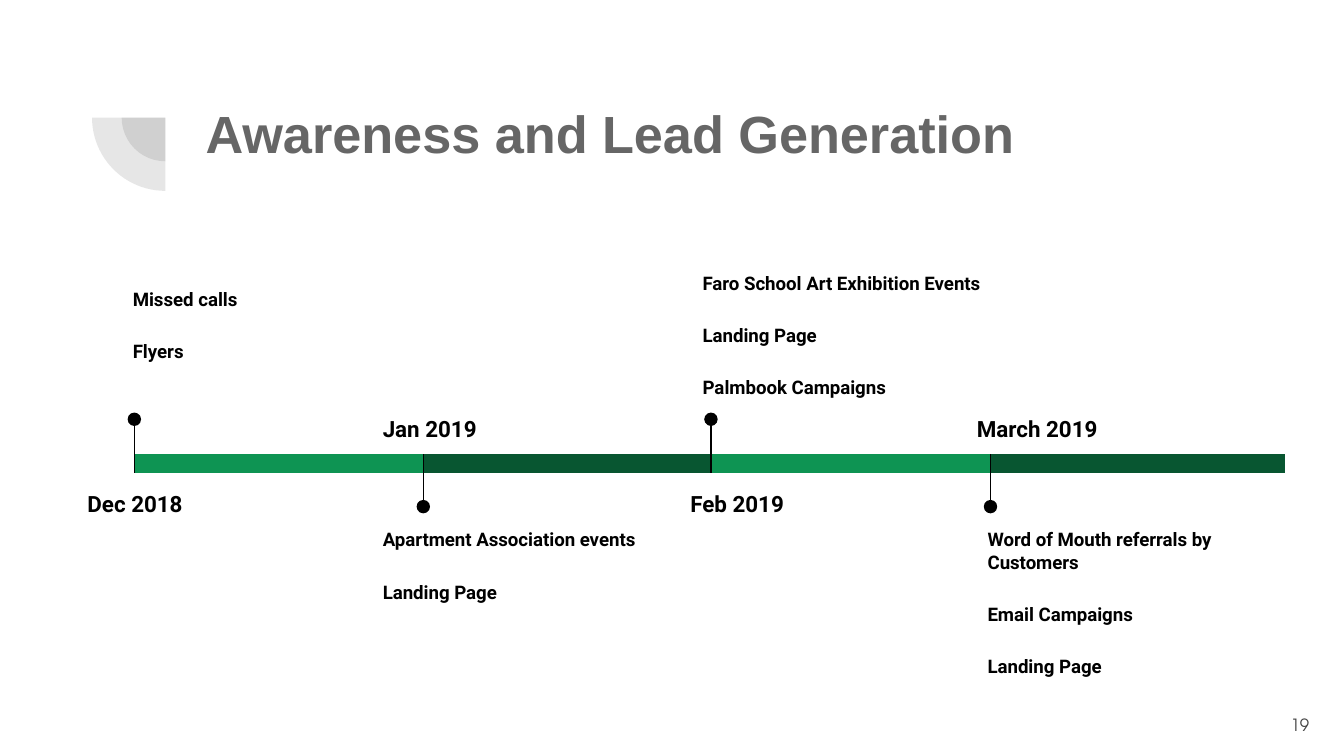
import pptx
import pptx.util
import pptx.dml.color
import pptx.enum.shapes
import pptx.enum.text
import pptx.oxml
import pptx.oxml.ns
from pptx.util import Inches, Pt

RGBColor = pptx.dml.color.RGBColor
MSO_SHAPE = pptx.enum.shapes.MSO_SHAPE
PP_ALIGN = pptx.enum.text.PP_ALIGN
MSO_ANCHOR = pptx.enum.text.MSO_ANCHOR

BLACK = RGBColor(0x00, 0x00, 0x00)
TITLE_GRAY = RGBColor(0x66, 0x66, 0x66)
DARK_GRAY = RGBColor(0x42, 0x42, 0x42)
LIGHT_GREEN = RGBColor(0x0E, 0x94, 0x53)
DARK_GREEN = RGBColor(0x08, 0x56, 0x31)

SLIDE_WIDTH = 10
SLIDE_HEIGHT = SLIDE_WIDTH * 9 / 16

TITLE = "Awareness and Lead Generation"
PAGE_NUMBER = "19"
# Start of bar, date, date box (left, width), notes box (left, top, width), notes
MILESTONES = [
    (1, "Dec 2018", (0.53, 0.95), (0.89, 2.04, 2.46), ["Missed calls", "Flyers"]),
    (3.15, "Jan 2019", (2.75, 0.93), (2.75, 3.83, 2.46),
     ["Apartment Association events", "Landing Page"]),
    (5.29, "Feb 2019", (4.94, 1.09), (5.13, 1.92, 2.46),
     ["Faro School Art Exhibition Events", "Landing Page", "Palmbook Campaigns"]),
    (7.37, "March 2019", (7.17, 1.53), (7.25, 3.83, 2.1),
     ["Word of Mouth referrals by Customers", "Email Campaigns", "Landing Page"]),
]
TIMELINE_END = 9.56
BAR_TOP, BAR_HEIGHT = 3.38, 0.14
DOT_SIZE = 0.1
QUARTER_CENTER = (1.23, 0.875)
QUARTER_DIAMETERS = (0.65, 1.09)


def add_filled_shape(slide, kind, left, top, width, height, color):
    shape = slide.shapes.add_shape(
        kind, Inches(left), Inches(top), Inches(width), Inches(height))
    shape.shadow.inherit = False
    shape.fill.solid()
    shape.fill.fore_color.rgb = color
    shape.line.fill.background()
    return shape


def add_quarter_circle(slide, diameter):
    """Draw the lower left quarter of a circle, mostly transparent."""
    left, top = (center - diameter / 2 for center in QUARTER_CENTER)
    shape = add_filled_shape(slide, MSO_SHAPE.PIE, left, top, diameter, diameter, DARK_GRAY)
    # The wedge spans 180 to 270 degrees, then turns to the lower left
    shape.adjustments[0], shape.adjustments[1] = 108, 162
    shape.rotation = 270
    color = shape._element.spPr.find(".//" + pptx.oxml.ns.qn("a:srgbClr"))
    color.append(pptx.oxml.parse_xml(
        f'<a:alpha {pptx.oxml.ns.nsdecls("a")} val="13000"/>'))


def format_text(shape, lines, font_name, size, color, bold=True, align=PP_ALIGN.LEFT):
    """Fill the shape with one paragraph per line and return the paragraphs."""
    frame = shape.text_frame
    frame.word_wrap = True
    frame.auto_size = pptx.enum.text.MSO_AUTO_SIZE.NONE
    frame.margin_left = frame.margin_right = Inches(0.1)
    frame.margin_top = frame.margin_bottom = Inches(0.1)
    frame.vertical_anchor = MSO_ANCHOR.TOP
    frame.text = "\n".join(lines)
    for paragraph in frame.paragraphs:
        paragraph.alignment = align
        paragraph.font.name = font_name
        paragraph.font.size = Pt(size)
        paragraph.font.bold = bold
        paragraph.font.color.rgb = color
    return frame.paragraphs


def add_text_box(slide, left, top, width, height):
    return slide.shapes.add_textbox(
        Inches(left), Inches(top), Inches(width), Inches(height))


def add_marker(slide, x, line_end, dot_center):
    """Draw a vertical line with a dot at its free end."""
    line = slide.shapes.add_connector(
        pptx.enum.shapes.MSO_CONNECTOR.STRAIGHT,
        Inches(x), Inches(dot_center), Inches(x), Inches(line_end))
    line.line.color.rgb = BLACK
    line.line.width = Pt(0.75)
    line._element.spPr.append(pptx.oxml.parse_xml(
        f'<a:effectLst {pptx.oxml.ns.nsdecls("a")}/>'))
    add_filled_shape(slide, MSO_SHAPE.OVAL, x - DOT_SIZE / 2, dot_center - DOT_SIZE / 2,
                     DOT_SIZE, DOT_SIZE, BLACK)


def add_milestone(slide, index):
    start, date, (date_left, date_width), (left, top, width), notes = MILESTONES[index]
    end = MILESTONES[index + 1][0] if index + 1 < len(MILESTONES) else TIMELINE_END
    notes_above = index % 2 == 0
    bar_bottom = BAR_TOP + BAR_HEIGHT

    add_filled_shape(slide, MSO_SHAPE.RECTANGLE, start, BAR_TOP, end - start, BAR_HEIGHT,
                     LIGHT_GREEN if notes_above else DARK_GREEN)
    if notes_above:
        add_marker(slide, start, bar_bottom, 3.12)
    else:
        add_marker(slide, start, BAR_TOP, 3.77)

    date_box = add_text_box(slide, date_left, 3.52 if notes_above else 2.96, date_width, 0.41)
    date_align = PP_ALIGN.CENTER if notes_above else PP_ALIGN.LEFT
    for paragraph in format_text(date_box, [date], "Roboto", 12, BLACK, align=date_align):
        paragraph.line_spacing = 1.15
        paragraph.space_after = Pt(16)

    notes_box = add_text_box(slide, left, top, width, 1.03)
    paragraphs = format_text(notes_box, notes, "Roboto", 10, BLACK)
    for paragraph in paragraphs[1:]:
        paragraph.space_before = Pt(16)
    paragraphs[-1].space_after = Pt(16)


def main():
    presentation = pptx.Presentation()
    presentation.slide_width = Inches(SLIDE_WIDTH)
    presentation.slide_height = Inches(SLIDE_HEIGHT)
    slide = presentation.slides.add_slide(presentation.slide_layouts[5])

    for diameter in QUARTER_DIAMETERS:
        add_quarter_circle(slide, diameter)

    title = slide.shapes.title
    title.left, title.top = Inches(1.43), Inches(0.65)
    title.width, title.height = Inches(7.69), Inches(1.09)
    format_text(title, [TITLE], "Arial", 28, TITLE_GRAY)

    page_box = add_text_box(slide, 9.24, 5.18, 0.6, 0.43)
    format_text(page_box, [PAGE_NUMBER], "TeX Gyre Adventor", 9, DARK_GRAY,
                bold=False, align=PP_ALIGN.RIGHT)
    page_box.text_frame.vertical_anchor = MSO_ANCHOR.MIDDLE

    for index in range(len(MILESTONES)):
        add_milestone(slide, index)

    presentation.save("out.pptx")


if __name__ == "__main__":
    main()
